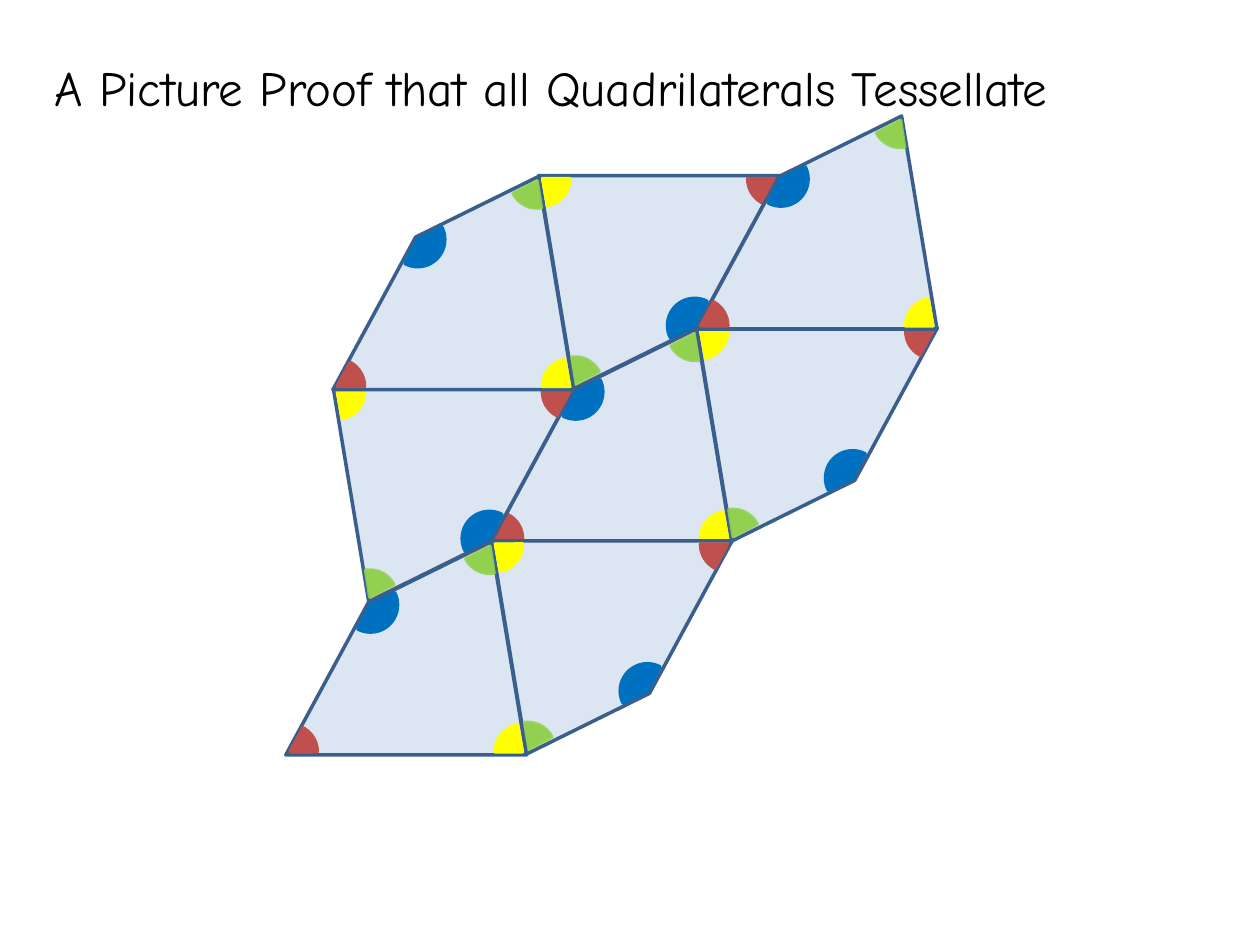
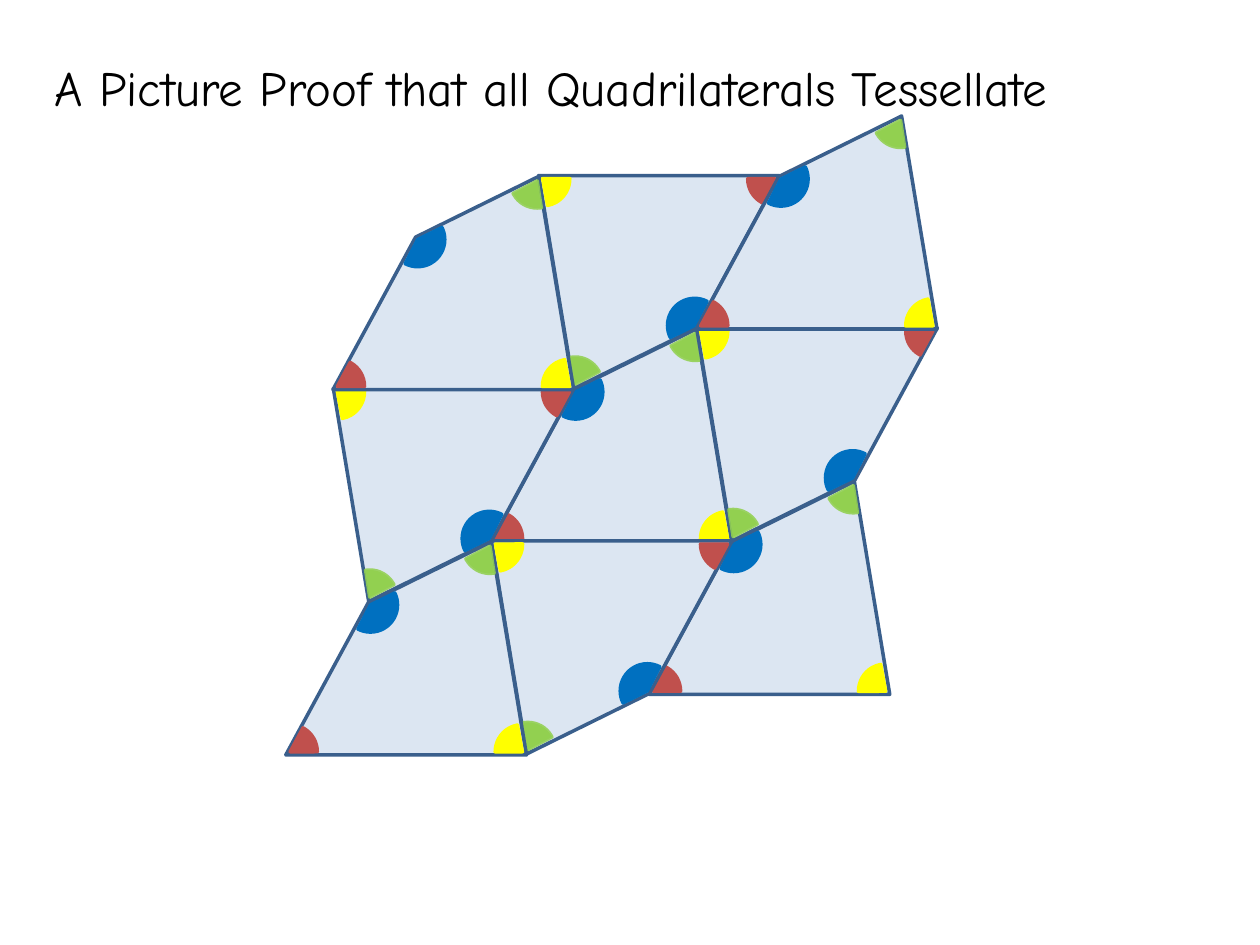
import dataclasses
import typing

import lxml.etree
import pptx
import pptx.dml.color
import pptx.enum.shapes
import pptx.enum.text
import pptx.oxml.ns
import pptx.shapes.autoshape
import pptx.shapes.group
import pptx.slide
import pptx.util

Pt = pptx.util.Pt
RGBColor = pptx.dml.color.RGBColor

BLACK = RGBColor(0x00, 0x00, 0x00)
TILE_FILL = RGBColor(0xDC, 0xE6, 0xF2)
TILE_EDGE = RGBColor(0x3A, 0x5F, 0x8C)
BLUE = RGBColor(0x00, 0x70, 0xC0)
GREEN = RGBColor(0x92, 0xD0, 0x50)
YELLOW = RGBColor(0xFF, 0xFF, 0x00)
RED = RGBColor(0xC0, 0x50, 0x4D)

TITLE = "A Picture Proof that all Quadrilaterals Tessellate"
TITLE_FONT = "Comic Neue"
TITLE_ONLY_LAYOUT = 5
LINE_WIDTH = 2
ANGLE_DIAMETER = 31
ADJUSTMENT_PER_DEGREE = 0.6


class Point(typing.NamedTuple):
    x: float
    y: float


class Tile(typing.NamedTuple):
    across: int
    down: int
    turned: bool = False


@dataclasses.dataclass(frozen=True)
class AngleMark:
    color: RGBColor
    left: float
    top: float
    start: float
    end: float
    rotation: float = 0
    line_opacity: int = 100


CORNERS = [Point(13, 134.7), Point(60.2, 47.6), Point(130.3, 13), Point(150.5, 134.7)]
ANGLE_MARKS = [
    AngleMark(BLUE, 45.9, 33.5, 333.76, 117.36),
    AngleMark(GREEN, 114.2, 0, 81.19, 152.23, line_opacity=87),
    AngleMark(YELLOW, 132.7, 117.4, 179.69, 259.47),
    AngleMark(RED, 0, 117.4, 208.36, 270, rotation=90),
]

ACROSS = Point(CORNERS[2].x - CORNERS[0].x, CORNERS[2].y - CORNERS[0].y)
DOWN = Point(CORNERS[3].x - CORNERS[1].x, CORNERS[3].y - CORNERS[1].y)
UPRIGHT_ORIGIN = Point(267.6, 175)
TURNED_ORIGIN = Point(267.6, 295.4)

EIGHT_TILES = [
    Tile(0, 0),
    Tile(0, 0, turned=True),
    Tile(1, 0, turned=True),
    Tile(1, -1, turned=True),
    Tile(0, -1, turned=True),
    Tile(0, -1),
    Tile(1, 0),
    Tile(-1, 0),
]
NINTH_TILE = Tile(0, 1)


def paint(shape: pptx.shapes.autoshape.Shape, fill: RGBColor, edge: RGBColor) -> None:
    shape.shadow.inherit = False
    shape.fill.solid()
    shape.fill.fore_color.rgb = fill
    shape.line.color.rgb = edge
    shape.line.width = Pt(LINE_WIDTH)


def set_line_opacity(shape: pptx.shapes.autoshape.Shape, percent: int) -> None:
    qn = pptx.oxml.ns.qn
    color = shape.element.find(f".//{qn('a:ln')}//{qn('a:srgbClr')}")
    lxml.etree.SubElement(color, qn("a:alpha")).set("val", str(percent * 1000))


def draw_angle(group: pptx.shapes.group.GroupShape, mark: AngleMark) -> None:
    pie = group.shapes.add_shape(
        pptx.enum.shapes.MSO_SHAPE.PIE,
        Pt(mark.left), Pt(mark.top), Pt(ANGLE_DIAMETER), Pt(ANGLE_DIAMETER),
    )
    pie.adjustments[0] = mark.start * ADJUSTMENT_PER_DEGREE
    pie.adjustments[1] = mark.end * ADJUSTMENT_PER_DEGREE
    pie.rotation = mark.rotation
    paint(pie, mark.color, mark.color)
    if mark.line_opacity < 100:
        set_line_opacity(pie, mark.line_opacity)


def draw_tile(slide: pptx.slide.Slide, tile: Tile) -> None:
    group = slide.shapes.add_group_shape()
    corners = [(Pt(corner.x), Pt(corner.y)) for corner in CORNERS]
    builder = group.shapes.build_freeform(*corners[0])
    builder.add_line_segments(corners[1:], close=True)
    paint(builder.convert_to_shape(), TILE_FILL, TILE_EDGE)
    for mark in ANGLE_MARKS:
        draw_angle(group, mark)
    origin = TURNED_ORIGIN if tile.turned else UPRIGHT_ORIGIN
    group.left = Pt(origin.x + tile.across * ACROSS.x + tile.down * DOWN.x)
    group.top = Pt(origin.y + tile.across * ACROSS.y + tile.down * DOWN.y)
    if tile.turned:
        group.rotation = 180


def place_title(slide: pptx.slide.Slide) -> None:
    title = slide.shapes.title
    title.left, title.top, title.width, title.height = Pt(24), Pt(29), Pt(669.6), Pt(41)
    frame = title.text_frame
    frame.text = TITLE
    frame.word_wrap = False
    frame.auto_size = pptx.enum.text.MSO_AUTO_SIZE.SHAPE_TO_FIT_TEXT
    frame.vertical_anchor = pptx.enum.text.MSO_ANCHOR.TOP
    paragraph = frame.paragraphs[0]
    paragraph.alignment = pptx.enum.text.PP_ALIGN.LEFT
    paragraph.font.name = TITLE_FONT
    paragraph.font.size = Pt(28)
    paragraph.font.color.rgb = BLACK
    slide.shapes.element.append(title.element)


def add_tessellation_slide(presentation, tiles: list[Tile]) -> None:
    slide = presentation.slides.add_slide(presentation.slide_layouts[TITLE_ONLY_LAYOUT])
    for tile in tiles:
        draw_tile(slide, tile)
    place_title(slide)


def main() -> None:
    presentation = pptx.Presentation()
    presentation.slide_width = Pt(720)
    presentation.slide_height = Pt(540)
    add_tessellation_slide(presentation, EIGHT_TILES)
    add_tessellation_slide(presentation, [NINTH_TILE, *EIGHT_TILES])
    presentation.save("out.pptx")


if __name__ == "__main__":
    main()
